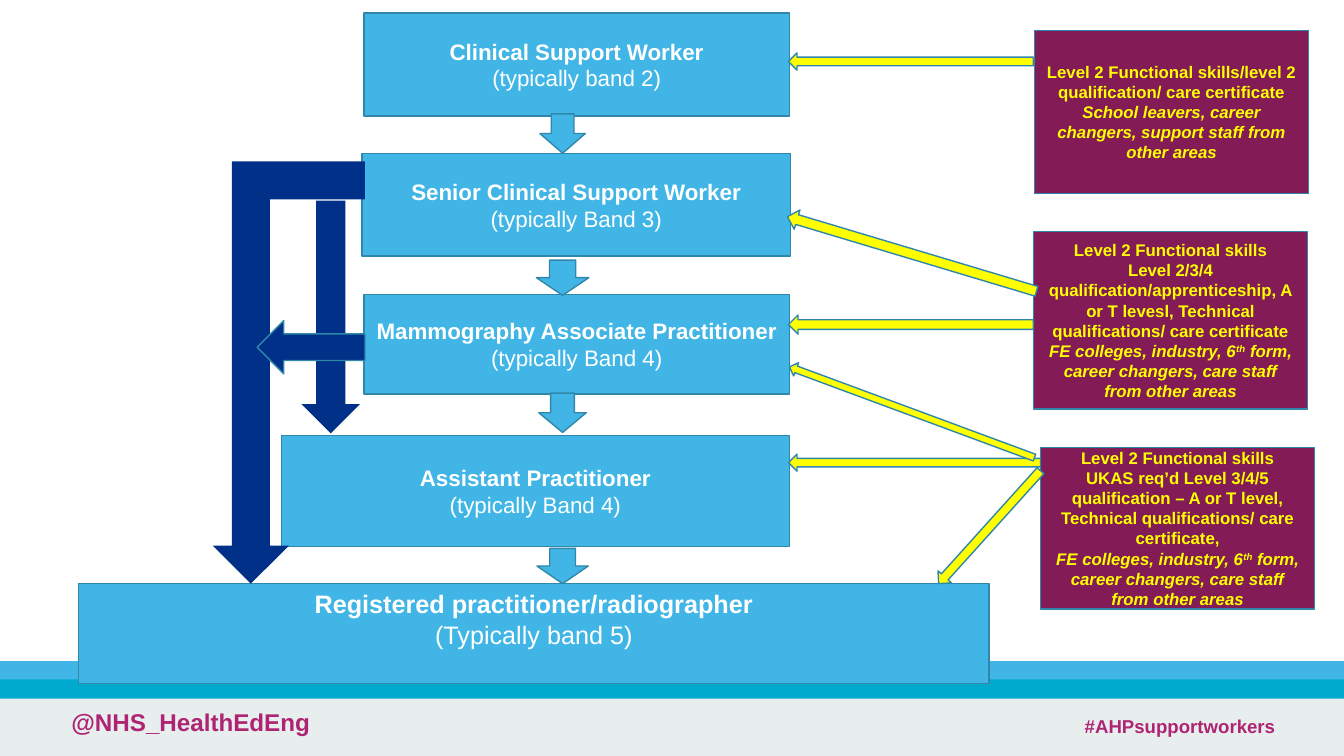
"""Build the career ladder slide for imaging support workers."""
import math

from pptx import Presentation, util as u
from pptx.dml.color import RGBColor
from pptx.enum import shapes, text

W, H = 13.33, 7.5
FONT = "Arial"
COLOURS = {
    "sky": "41B6E6", "aqua": "00A9CE", "grey": "E8EDEE", "navy": "003087",
    "plum": "831B56", "yellow": "FFFF00", "edge": "3087AA",
    "white": "FFFFFF", "pink": "AE2473",
}
KIND = shapes.MSO_SHAPE

BANDS = [
    ("grey", 6.93, 0.57),
    ("sky", 6.56, 0.19),
    ("aqua", 6.74, 0.19),
]
FOOTER = [
    ("@NHS_HealthEdEng", (0.61, 6.97, 7.78, 0.53), 17.3),
    ("#AHPsupportworkers", (10.66, 7.04, 2.55, 0.33), 13.3),
]
ROLES = [
    ("Clinical Support Worker", "(typically band 2)", (3.61, 0.13, 4.22, 1.02), 16, 0.05),
    ("Senior Clinical Support Worker", "(typically Band 3)", (3.59, 1.52, 4.25, 1.02), 16, 0.05),
    ("Mammography Associate Practitioner", "(typically Band 4)", (3.61, 2.92, 4.22, 0.99), 16, 0.05),
    ("Assistant Practitioner", "(typically Band 4)", (2.79, 4.32, 5.04, 1.1), 16, 0.05),
    ("Registered practitioner/radiographer", "(Typically band 5)", (0.78, 5.79, 9.03, 0.99), 18, 0.34),
]
STEP_CENTRE = 5.58
STEPS = [(1.13, 0.45, 0.39), (2.58, 0.52, 0.35), (3.9, 0.47, 0.39), (5.44, 0.51, 0.35)]

COLLEGES = [("FE colleges, industry, 6", "i"), ("th", "i^"),
            (" form, career changers, care staff from other areas", "i")]
ENTRY_W = 2.72
ENTRIES = [
    (10.26, 0.3, 1.62, [
        [("Level 2 Functional skills/level 2 qualification/ care certificate", "")],
        [("School leavers, career changers, support staff from other areas", "i")],
    ]),
    (10.25, 2.3, 1.76, [
        [("Level 2 Functional skills", "")],
        [("Level 2/3/4 qualification/apprenticeship, A or T levesl, "
          "Technical qualifications/ care certificate", "")],
        COLLEGES,
    ]),
    (10.32, 4.44, 1.6, [
        [("Level 2 Functional skills", "")],
        [("UKAS req’d Level 3/4/5 qualification – A or T level, "
          "Technical qualifications/ care certificate,", "")],
        COLLEGES,
    ]),
]
ENTRY_ARROWS = [
    ((10.25, 0.61), (7.82, 0.61), 0.17),
    ((10.28, 2.89), (7.81, 2.15), 0.2),
    ((10.25, 3.22), (7.82, 3.22), 0.19),
    ((10.32, 4.67), (9.31, 5.79), 0.18),
    ((10.32, 4.59), (7.82, 4.59), 0.17),
    ((10.26, 4.54), (7.83, 3.64), 0.14),
]


def rgb(name):
    return RGBColor.from_string(COLOURS[name])


def add_box(s, kind, frame, fill, edge=True, rotation=0):
    sp = s.shapes.add_shape(kind, *(u.Inches(v) for v in frame))
    sp.shadow.inherit = False
    sp.fill.solid()
    sp.fill.fore_color.rgb = rgb(fill)
    if edge:
        sp.line.color.rgb = rgb("edge")
        sp.line.width = u.Pt(1)
    else:
        sp.line.fill.background()
    sp.rotation = rotation
    return sp


def style(r, size, colour, bold=True):
    r.font.name, r.font.size, r.font.bold = FONT, u.Pt(size), bold
    r.font.color.rgb = rgb(colour)


def write(sp, paragraphs, size, colour):
    tf = sp.text_frame
    tf.word_wrap = True
    tf.vertical_anchor = text.MSO_ANCHOR.MIDDLE
    for i, runs in enumerate(paragraphs):
        p = tf.paragraphs[0] if i == 0 else tf.add_paragraph()
        p.alignment = text.PP_ALIGN.CENTER
        for words, marks in runs:
            r = p.add_run()
            r.text = words
            style(r, size, colour, "n" not in marks)
            if "i" in marks:
                r.font.italic = True
            if "^" in marks:
                r._r.get_or_add_rPr().set("baseline", "30000")


def add_entry_arrow(s, start, tip, thickness):
    dx, dy = start[0] - tip[0], start[1] - tip[1]
    length = math.hypot(dx, dy)
    left = (start[0] + tip[0] - length) / 2
    top = (start[1] + tip[1] - thickness) / 2
    angle = math.degrees(math.atan2(dy, dx)) % 360
    add_box(s, KIND.LEFT_ARROW, (left, top, length, thickness), "yellow", rotation=angle)


def main():
    prs = Presentation()
    prs.slide_width, prs.slide_height = u.Inches(W), u.Inches(H)
    s = prs.slides.add_slide(prs.slide_layouts[6])

    for fill, top, height in BANDS:
        add_box(s, KIND.RECTANGLE, (0, top, W, height), fill, edge=False)
    for words, frame, size in FOOTER:
        tf = s.shapes.add_textbox(*(u.Inches(v) for v in frame)).text_frame
        tf.word_wrap = True
        tf.text = words
        style(tf.paragraphs[0].runs[0], size, "pink")

    add_box(s, KIND.DOWN_ARROW, (2.99, 1.99, 0.58, 2.31), "navy", edge=False)
    for role, band, frame, size, inset in ROLES:
        sp = add_box(s, KIND.FLOWCHART_PROCESS, frame, "sky")
        sp.text_frame.margin_bottom = u.Inches(inset)
        write(sp, [[(role, "")], [(band, "n")]], size, "white")
    for top, width, height in STEPS:
        add_box(s, KIND.DOWN_ARROW, (STEP_CENTRE - width / 2, top, width, height), "sky")

    for left, top, height, paragraphs in ENTRIES:
        sp = add_box(s, KIND.FLOWCHART_PROCESS, (left, top, ENTRY_W, height), "plum")
        write(sp, paragraphs, 12, "yellow")
    for start, tip, thickness in ENTRY_ARROWS:
        add_entry_arrow(s, start, tip, thickness)

    add_box(s, KIND.BENT_UP_ARROW, (2.11, 1.6, 1.51, 4.19), "navy", edge=False, rotation=180)
    add_box(s, KIND.LEFT_ARROW, (2.55, 3.18, 1.07, 0.53), "navy")
    prs.save("out.pptx")


if __name__ == "__main__":
    main()
